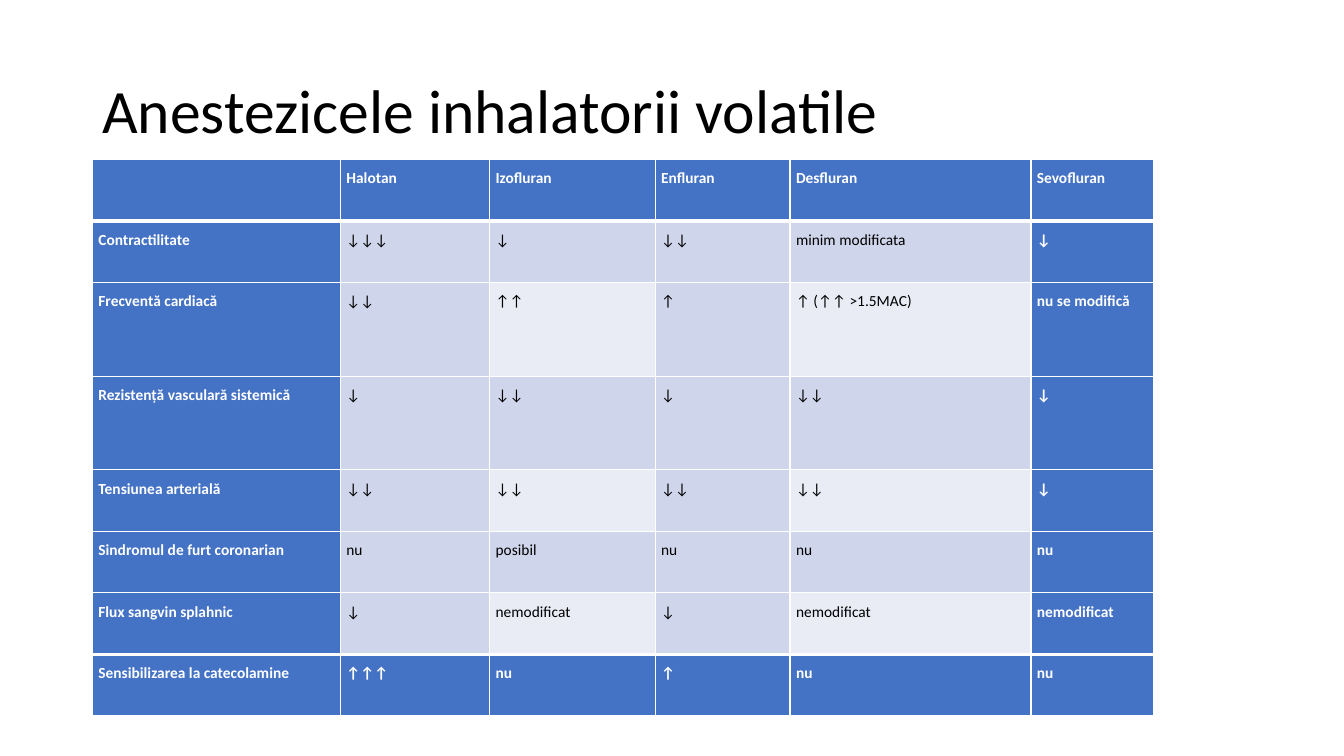
from lxml.etree import SubElement
from pptx import Presentation
from pptx.dml.color import RGBColor
from pptx.enum.text import MSO_ANCHOR as Anchor, PP_ALIGN as Align
from pptx.oxml.ns import qn
from pptx.util import Cm, Pt

FONT = "Calibri"
WHITE, BLACK = "FFFFFF", "000000"
BLUE, BAND, PALE_BAND = "4472C4", "CFD5EA", "E9EBF5"
THIN, THICK = 1, 3

TITLE = "Anestezicele inhalatorii volatile"
EFFECTS = [
    ["", "Halotan", "Izofluran", "Enfluran", "Desfluran", "Sevofluran"],
    ["Contractilitate", "↓↓↓", "↓", "↓↓", "minim modificata", "↓"],
    ["Frecventă cardiacă", "↓↓", "↑↑", "↑", "↑ (↑↑ >1.5MAC)", "nu se modifică"],
    ["Rezistență vasculară sistemică", "↓", "↓↓", "↓", "↓↓", "↓"],
    ["Tensiunea arterială", "↓↓", "↓↓", "↓↓", "↓↓", "↓"],
    ["Sindromul de furt coronarian", "nu", "posibil", "nu", "nu", "nu"],
    ["Flux sangvin splahnic", "↓", "nemodificat", "↓", "nemodificat", "nemodificat"],
    ["Sensibilizarea la catecolamine", "↑↑↑", "nu", "↑", "nu", "nu"],
]
COLUMN_WIDTHS = [6.25, 3.76, 4.17, 3.4, 6.07, 3.1]
ROW_HEIGHTS = [1.55, 1.55, 2.36, 2.36, 1.55, 1.55, 1.55, 1.55]
LAST_ROW, LAST_COLUMN = len(ROW_HEIGHTS) - 1, len(COLUMN_WIDTHS) - 1


def color(hex_value):
    return RGBColor.from_string(hex_value)


def set_font(paragraph, size, hex_value, bold=False):
    font = paragraph.font
    font.name, font.size, font.bold = FONT, Pt(size), bold
    font.color.rgb = color(hex_value)


def add_title(slide, left, top, width, height):
    frame = slide.shapes.add_textbox(Cm(left), Cm(top), Cm(width), Cm(height)).text_frame
    frame.word_wrap = True
    frame.vertical_anchor = Anchor.MIDDLE
    paragraph = frame.paragraphs[0]
    paragraph.text = TITLE
    paragraph.line_spacing = 0.9
    set_font(paragraph, 44, BLACK)


def add_borders(cell, top, bottom):
    """Draw white cell borders; top and bottom are widths in points."""
    properties = cell._tc.get_or_add_tcPr()
    for side, width in (("L", THIN), ("R", THIN), ("T", top), ("B", bottom)):
        line = SubElement(properties, qn(f"a:ln{side}"), w=str(Pt(width)))
        fill = SubElement(line, qn("a:solidFill"))
        SubElement(fill, qn("a:srgbClr"), val=WHITE)


def format_cell(cell, row, column):
    """Blue on the outer rows and columns, banded inside."""
    outer = row in (0, LAST_ROW) or column in (0, LAST_COLUMN)
    banded = row % 2 or column % 2
    add_borders(cell,
                top=THICK if row in (1, LAST_ROW) else THIN,
                bottom=THICK if row in (0, LAST_ROW - 1) else THIN)
    cell.fill.solid()
    cell.fill.fore_color.rgb = color(BLUE if outer else BAND if banded else PALE_BAND)
    cell.margin_left = cell.margin_right = Cm(0.15)
    cell.margin_top = cell.margin_bottom = 0
    paragraph = cell.text_frame.paragraphs[0]
    paragraph.alignment = Align.JUSTIFY
    paragraph.line_spacing = 1.5
    set_font(paragraph, 11, WHITE if outer else BLACK, bold=outer)


def add_effects_table(slide, left, top):
    table = slide.shapes.add_table(
        len(ROW_HEIGHTS), len(COLUMN_WIDTHS), Cm(left), Cm(top),
        Cm(sum(COLUMN_WIDTHS)), Cm(sum(ROW_HEIGHTS))).table
    for column, width in zip(table.columns, COLUMN_WIDTHS):
        column.width = Cm(width)
    for row, height in zip(table.rows, ROW_HEIGHTS):
        row.height = Cm(height)
    for row, effects in enumerate(EFFECTS):
        for column, effect in enumerate(effects):
            cell = table.cell(row, column)
            cell.text = effect
            format_cell(cell, row, column)


def main():
    deck = Presentation()
    deck.slide_width, deck.slide_height = Cm(33.87), Cm(19.05)
    slide = deck.slides.add_slide(deck.slide_layouts[6])
    add_title(slide, 2.33, 1.01, 29.21, 3.68)
    add_effects_table(slide, 2.33, 4.02)
    deck.save("out.pptx")


if __name__ == "__main__":
    main()
